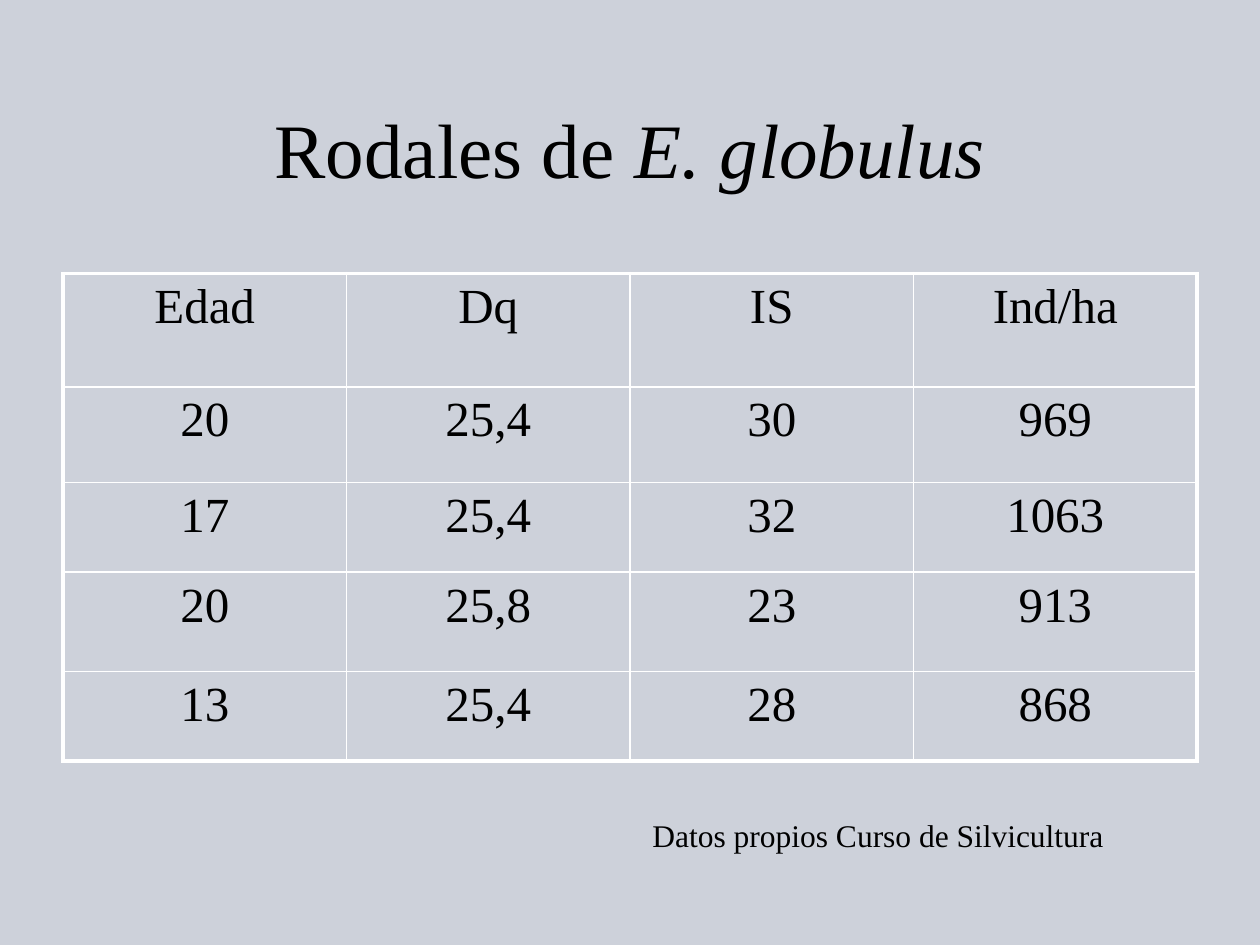
from pptx import Presentation
from pptx.dml.color import RGBColor
from pptx.enum.text import MSO_ANCHOR, MSO_AUTO_SIZE, PP_ALIGN
from pptx.oxml import parse_xml
from pptx.oxml.ns import nsdecls
from pptx.util import Inches, Pt

LEFT, CENTER = PP_ALIGN.LEFT, PP_ALIGN.CENTER
TOP, MIDDLE = MSO_ANCHOR.TOP, MSO_ANCHOR.MIDDLE
NO_FIT, GROW = MSO_AUTO_SIZE.NONE, MSO_AUTO_SIZE.SHAPE_TO_FIT_TEXT

COLORS = {"background": "CDD1DA", "text": "000000", "border": "FFFFFF"}
FONT = "Times New Roman"
THIN, THICK = 1, 2.25

ROW_HEIGHTS = [0.9, 0.76, 0.71, 0.79, 0.71]
STANDS = [
    ["Edad", "Dq", "IS", "Ind/ha"],
    ["20", "25,4", "30", "969"],
    ["17", "25,4", "32", "1063"],
    ["20", "25,8", "23", "913"],
    ["13", "25,4", "28", "868"],
]


class SlideBuilder:
    """Holds the style and the current slide, and adds each kind of element."""

    def __init__(self, prs):
        self.slide = prs.slides.add_slide(prs.slide_layouts[6])
        fill = self.slide.background.fill
        fill.solid()
        fill.fore_color.rgb = RGBColor.from_string(COLORS["background"])

    def run(self, p, text, size, **formats):
        r = p.add_run()
        r.text = text
        for name, value in {"name": FONT, "size": Pt(size), **formats}.items():
            setattr(r.font, name, value)
        r.font.color.rgb = RGBColor.from_string(COLORS["text"])

    def text(self, box, runs, size, align=LEFT, anchor=TOP, auto_size=NO_FIT):
        tf = self.slide.shapes.add_textbox(*map(Inches, box)).text_frame
        formats = {"word_wrap": True, "vertical_anchor": anchor, "auto_size": auto_size}
        for name, value in formats.items():
            setattr(tf, name, value)
        p = tf.paragraphs[0]
        p.alignment = align
        for text, italic in runs:
            self.run(p, text, size, italic=italic)

    def border(self, cell, side, width):
        cell._tc.get_or_add_tcPr().append(parse_xml(
            f'<a:ln{side} {nsdecls("a")} w="{Pt(width)}"><a:solidFill>'
            f'<a:srgbClr val="{COLORS["border"]}"/></a:solidFill></a:ln{side}>'))

    def table(self, box, rows, heights, size):
        last_row, last_col = len(rows) - 1, len(rows[0]) - 1
        table = self.slide.shapes.add_table(
            len(rows), len(rows[0]), *map(Inches, box)).table
        table.first_row = table.horz_banding = False
        for i, (values, height) in enumerate(zip(rows, heights)):
            table.rows[i].height = Inches(height)
            for j, value in enumerate(values):
                cell = table.cell(i, j)
                outer = {"L": j == 0, "R": j == last_col, "T": i == 0, "B": i == last_row}
                for side, is_outer in outer.items():
                    self.border(cell, side, THICK if is_outer else THIN)
                cell.fill.background()
                p = cell.text_frame.paragraphs[0]
                p.alignment = CENTER
                self.run(p, value, size)


def main():
    prs = Presentation()
    prs.slide_width, prs.slide_height = Inches(10), Inches(7.5)
    s = SlideBuilder(prs)
    s.text((0.5, 0.42, 9, 1.5), [("Rodales de ", False), ("E. globulus", True)],
           44, align=CENTER, anchor=MIDDLE)
    s.table((0.5, 2.17, 9, sum(ROW_HEIGHTS)), STANDS, ROW_HEIGHTS, 28)
    s.text((5.08, 6.43, 4.41, 0.4), [("Datos propios Curso de Silvicultura", False)],
           18, auto_size=GROW)
    prs.save("out.pptx")


if __name__ == "__main__":
    main()
